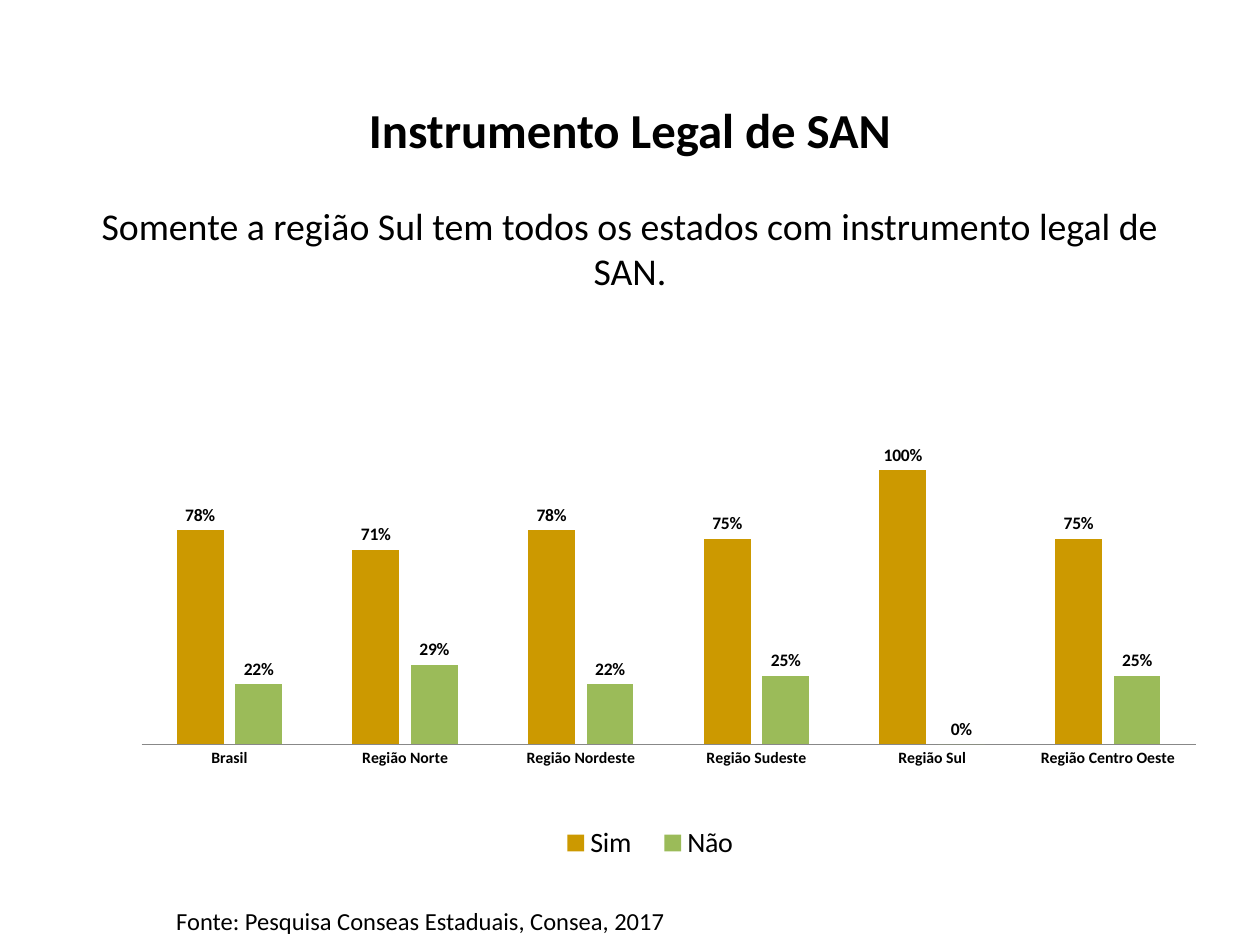
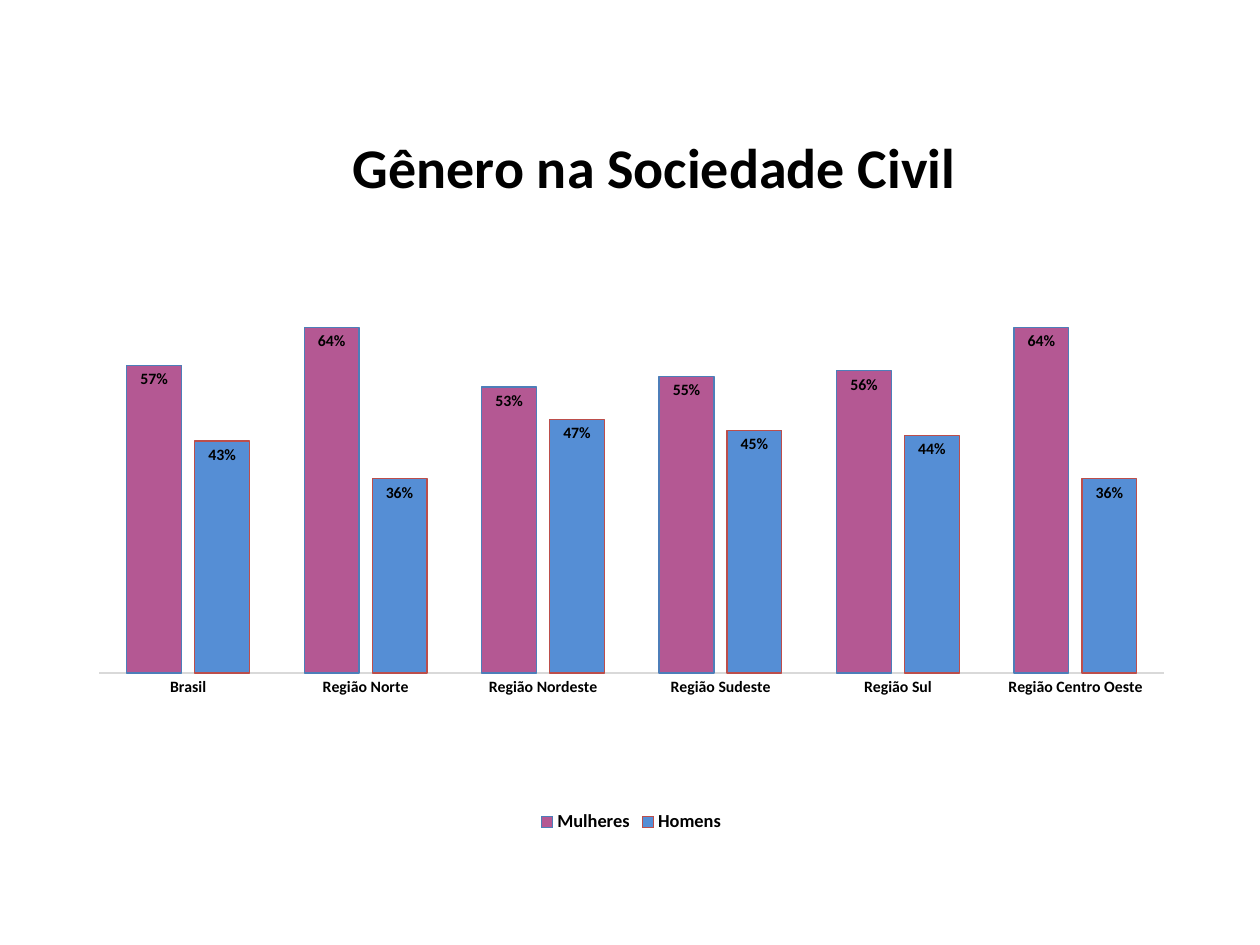
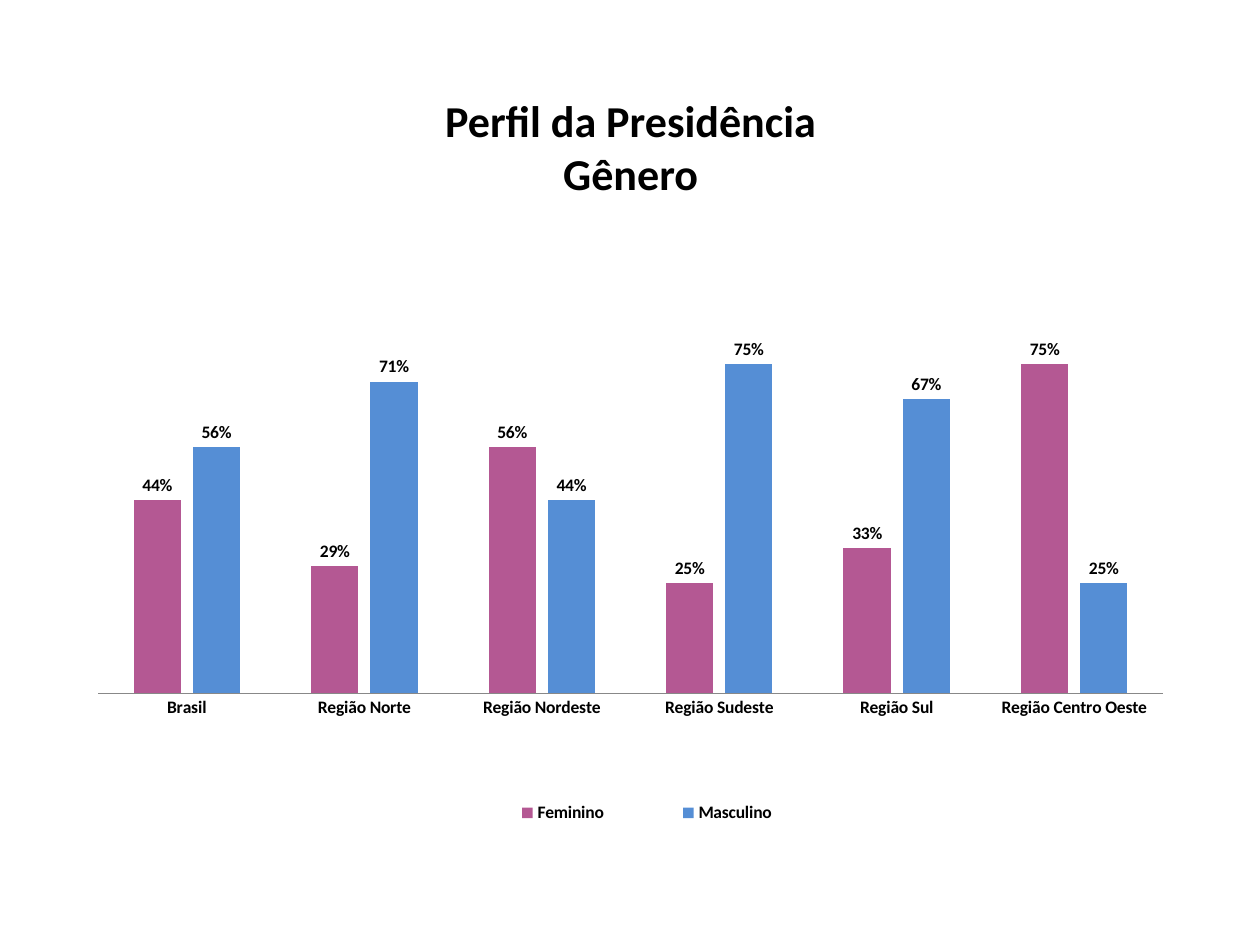
"""Build three slides on state food-security councils, each with a column chart."""
from dataclasses import dataclass
from typing import Any, NamedTuple, Optional

from lxml import etree
from pptx import Presentation
from pptx import util as u
from pptx.chart.data import CategoryChartData
from pptx.dml.color import RGBColor
from pptx.enum import chart as ch
from pptx.enum import text
from pptx.oxml.ns import qn


class Box(NamedTuple):
    left: float
    top: float
    width: float
    height: float


@dataclass(frozen=True)
class Theme:
    font: str = "Calibri"
    ink: str = "000000"
    axis: str = "888888"
    pale_axis: str = "D9D9D9"
    ochre: str = "CC9900"
    green: str = "9BBB59"
    plum: str = "B45893"
    blue: str = "558ED5"
    blue_edge: str = "4D7EB9"
    red_edge: str = "BC4E4B"
    heading: float = 27.9
    large_heading: float = 32
    small_heading: float = 25.2
    subtitle: float = 21.6
    source: float = 14
    chart: float = 10
    small: float = 9
    hairline: float = 0.75


THEME = Theme()
REGIONS = ("Brasil", "Região Norte", "Região Nordeste", "Região Sudeste",
           "Região Sul", "Região Centro Oeste")
PERCENT = "0%"


class Line(NamedTuple):
    words: str
    size: float
    bold: bool = True
    before: float = 0


class Series(NamedTuple):
    name: str
    percents: tuple[int, ...]
    fill: str
    edge: Optional[str] = None


@dataclass(frozen=True)
class ColumnChart:
    box: Box
    plot: Box
    series: tuple[Series, Series]
    maximum: float
    legend_box: Optional[Box] = None
    legend_size: float = THEME.chart
    legend_bold: bool = True
    category_size: float = THEME.chart
    label_size: float = THEME.chart
    label_position: Any = ch.XL_LABEL_POSITION.OUTSIDE_END
    axis: str = THEME.axis
    gap: int = 150
    overlap: int = -25


@dataclass(frozen=True)
class ChartSlide:
    title_box: Box
    title: tuple[Line, ...]
    chart: ColumnChart
    source: Optional[str] = None


SLIDES = (
    ChartSlide(
        Box(36, 39.6, 648, 145.4),
        (Line("Instrumento Legal de SAN", THEME.heading),
         Line("Somente a região Sul tem todos os estados com instrumento legal de SAN.",
              THEME.subtitle, False, 25.5)),
        ColumnChart(
            Box(54, 196.6, 641.5, 300.2), Box(0.042, 0.24, 0.939, 0.522),
            (Series("Sim", (78, 71, 78, 75, 100, 75), THEME.ochre),
             Series("Não", (22, 29, 22, 25, 0, 25), THEME.green)),
            maximum=1, legend_box=Box(0.4, 0.91, 0.19, 0.08), legend_size=16,
            legend_bold=False, category_size=THEME.small),
        "Fonte: Pesquisa Conseas Estaduais, Consea, 2017"),
    ChartSlide(
        Box(167, 72, 414, 46),
        (Line("Gênero na Sociedade Civil", THEME.large_heading),),
        ColumnChart(
            Box(36.7, 122.4, 648, 356.4), Box(0.031, 0.13, 0.939, 0.606),
            (Series("Mulheres", (57, 64, 53, 55, 56, 64), THEME.plum, THEME.blue_edge),
             Series("Homens", (43, 36, 47, 45, 44, 36), THEME.blue, THEME.red_edge)),
            maximum=0.7, legend_size=10.5, category_size=THEME.small,
            label_size=THEME.small, label_position=ch.XL_LABEL_POSITION.INSIDE_END,
            axis=THEME.pale_axis, gap=100, overlap=-24)),
    ChartSlide(
        Box(20.2, 38.6, 680.4, 90),
        (Line("Perfil da Presidência", THEME.small_heading),
         Line("Gênero", THEME.small_heading)),
        ColumnChart(
            Box(36, 126, 648, 356.4), Box(0.031, 0.195, 0.939, 0.563),
            (Series("Feminino", (44, 29, 56, 25, 33, 75), THEME.plum),
             Series("Masculino", (56, 71, 44, 75, 67, 25), THEME.blue)),
            maximum=0.8, legend_box=Box(0.34, 0.92, 0.35, 0.06))),
)


def apply(target: Any, values: dict[str, Any]) -> None:
    for name, value in values.items():
        setattr(target, name, value)


def points(box: Box) -> tuple[u.Length, ...]:
    return tuple(u.Pt(length) for length in box)


def style_font(font: Any, size: float, bold: bool = False) -> None:
    apply(font, {"name": THEME.font, "size": u.Pt(size), "bold": bold})
    font.color.rgb = RGBColor.from_string(THEME.ink)


def style_line(line: Any, color: str) -> None:
    line.color.rgb = RGBColor.from_string(color)
    line.width = u.Pt(THEME.hairline)


def manual_layout(box: Box, inner: bool = False) -> Any:
    layout = etree.Element(qn("c:layout"))
    manual = etree.SubElement(layout, qn("c:manualLayout"))
    values = {"layoutTarget": "inner"} if inner else {}
    values |= {"xMode": "edge", "yMode": "edge"}
    values |= dict(zip("xywh", map(str, box)))
    for tag, value in values.items():
        etree.SubElement(manual, qn(f"c:{tag}"), val=value)
    return layout


def add_title(s: Any, box: Box, lines: tuple[Line, ...]) -> None:
    sp = s.shapes.title
    apply(sp, dict(zip(("left", "top", "width", "height"), points(box))))
    tf = sp.text_frame
    apply(tf, {"word_wrap": True, "auto_size": text.MSO_AUTO_SIZE.NONE,
               "vertical_anchor": text.MSO_ANCHOR.MIDDLE})
    for i, line in enumerate(lines):
        p = tf.add_paragraph() if i else tf.paragraphs[0]
        apply(p, {"alignment": text.PP_ALIGN.CENTER, "space_before": u.Pt(line.before)})
        r = p.add_run()
        r.text = line.words
        style_font(r.font, line.size, line.bold)


def add_source(s: Any, words: str) -> None:
    tf = s.shapes.add_textbox(*points(Box(93.6, 514, 296.6, 24))).text_frame
    tf.word_wrap = False
    r = tf.paragraphs[0].add_run()
    r.text = words
    style_font(r.font, THEME.source)


def style_axes(chart: Any, design: ColumnChart) -> None:
    apply(chart.value_axis, {"visible": False, "has_major_gridlines": False,
                             "minimum_scale": 0, "maximum_scale": design.maximum})
    axis = chart.category_axis
    apply(axis, {"major_tick_mark": ch.XL_TICK_MARK.NONE,
                 "minor_tick_mark": ch.XL_TICK_MARK.NONE, "has_major_gridlines": False})
    style_font(axis.tick_labels.font, design.category_size, True)
    style_line(axis.format.line, design.axis)


def style_series(plot: Any, design: ColumnChart) -> None:
    apply(plot, {"gap_width": design.gap, "overlap": design.overlap,
                 "vary_by_categories": False})
    for series, spec in zip(plot.series, design.series):
        series.invert_if_negative = False
        series.format.fill.solid()
        series.format.fill.fore_color.rgb = RGBColor.from_string(spec.fill)
        if spec.edge:
            style_line(series.format.line, spec.edge)
        labels = series.data_labels
        apply(labels, {"show_value": True, "number_format": PERCENT,
                       "number_format_is_linked": False, "position": design.label_position})
        style_font(labels.font, design.label_size, True)


def style_legend(chart: Any, design: ColumnChart) -> None:
    chart.has_legend = True
    legend = chart.legend
    apply(legend, {"position": ch.XL_LEGEND_POSITION.BOTTOM, "include_in_layout": False})
    style_font(legend.font, design.legend_size, design.legend_bold)
    if design.legend_box:
        element = legend._element
        for old in element.findall(qn("c:layout")):
            element.remove(old)
        element.find(qn("c:legendPos")).addnext(manual_layout(design.legend_box))


def add_chart(s: Any, design: ColumnChart) -> None:
    data = CategoryChartData(number_format=PERCENT)
    data.categories = REGIONS
    for spec in design.series:
        data.add_series(spec.name, [percent / 100 for percent in spec.percents])
    chart = s.shapes.add_chart(ch.XL_CHART_TYPE.COLUMN_CLUSTERED,
                               *points(design.box), data).chart
    chart.has_title = False
    style_font(chart.font, THEME.chart)
    style_axes(chart, design)
    style_series(chart.plots[0], design)
    style_legend(chart, design)
    area = chart._chartSpace.chart.plotArea
    for old in area.findall(qn("c:layout")):
        area.remove(old)
    area.insert(0, manual_layout(design.plot, inner=True))


def main() -> None:
    prs = Presentation()
    apply(prs, {"slide_width": u.Pt(720), "slide_height": u.Pt(540)})
    title_only = prs.slide_layouts.get_by_name("Title Only")
    for design in SLIDES:
        s = prs.slides.add_slide(title_only)
        add_title(s, design.title_box, design.title)
        add_chart(s, design.chart)
        if design.source:
            add_source(s, design.source)
    prs.save("out.pptx")


if __name__ == "__main__":
    main()
